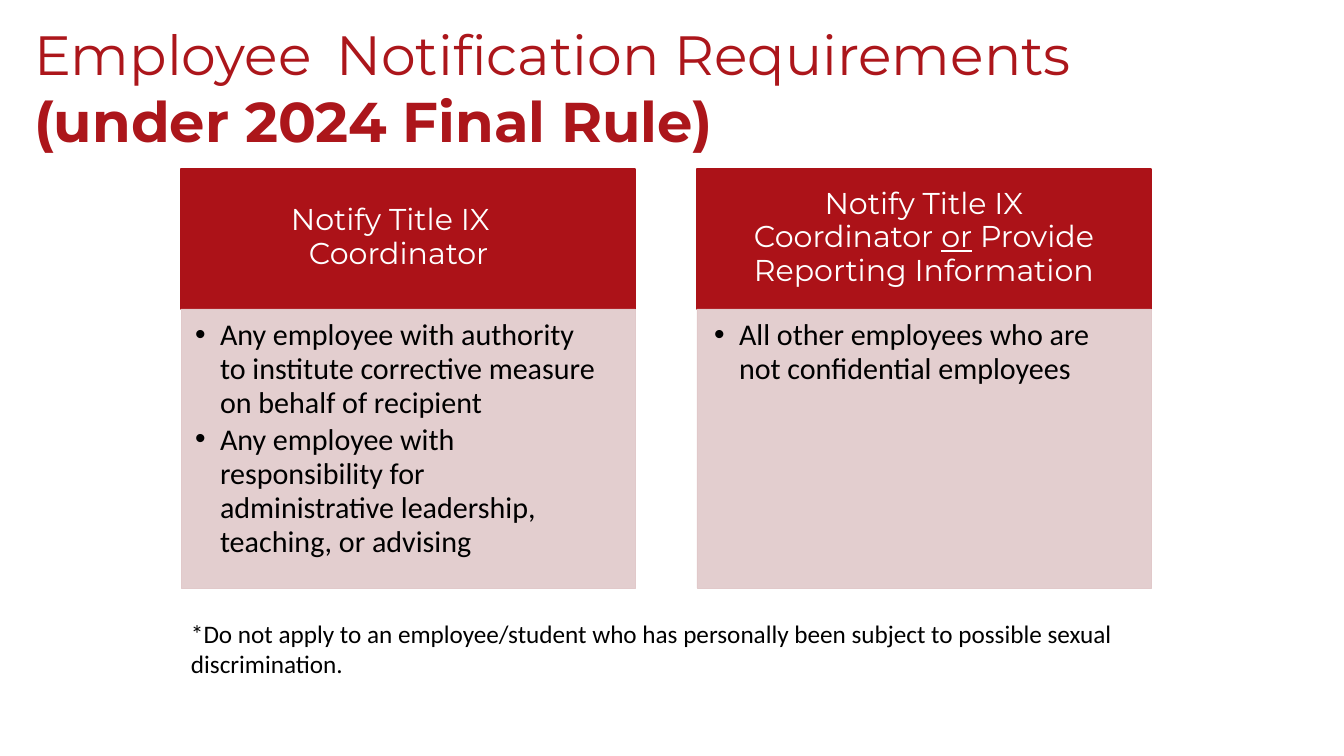
from pptx import Presentation
from pptx.dml.color import RGBColor as Rgb
from pptx.enum.text import MSO_ANCHOR as Anchor, MSO_AUTO_SIZE as Fit, PP_ALIGN as Align
from pptx.oxml.ns import qn
from pptx.util import Pt
from lxml.etree import SubElement as Sub

COLORS = {"title": "AC161B", "head": "AC1218", "body": "E1C9CA",
          "white": "FFFFFF", "black": "000000"}
WIDE, HIGH = 1344, 756
SCALE = 12192000 / WIDE


def px(n):
    return round(n * SCALE)


def rgb(name):
    return Rgb.from_string(COLORS[name])


def place(shape, box):
    shape.left, shape.top, shape.width, shape.height = map(px, box)


def frame(shape, left=0, top=0, right=0, bottom=0, anchor=Anchor.TOP):
    text = shape.text_frame
    text.word_wrap = True
    text.auto_size = Fit.NONE
    text.vertical_anchor = anchor
    text.margin_left, text.margin_top = px(left), px(top)
    text.margin_right, text.margin_bottom = px(right), px(bottom)
    return text


def style(para, face, size, color, space, align=Align.LEFT):
    para.alignment = align
    para.line_spacing = space
    para.space_before = Pt(0)
    font = para.font
    font.name, font.size, font.bold = face, Pt(size), False
    font.color.rgb = rgb(color)


def indent(para, left, first):
    props = para._p.get_or_add_pPr()
    props.set("marL", str(px(left)))
    props.set("indent", str(px(first)))
    return props


def paint(shape, color, width):
    shape.fill.solid()
    shape.fill.fore_color.rgb = rgb(color)
    shape.line.color.rgb = rgb(color)
    shape.line.width = Pt(width)


def add_title(shape, box):
    place(shape, box)
    para = frame(shape, top=2).paragraphs[0]
    tabs = Sub(indent(para, 0, 0), qn("a:tabLst"))
    Sub(tabs, qn("a:tab"), pos=str(px(319)), algn="l")
    style(para, "Montserrat", 39.5, "title", 1.0)
    para.add_run().text = "Employee\tNotification Requirements"
    para.add_line_break()
    rule = para.add_run()
    rule.text = "(under 2024 Final Rule)"
    rule.font.size, rule.font.bold = Pt(40), True


def add_head(shape, box, lines, align, left, first):
    place(shape, box)
    paint(shape, "head", 1)
    para = frame(shape, bottom=4, anchor=Anchor.MIDDLE).paragraphs[0]
    indent(para, left, first)
    style(para, "Montserrat", 21.5, "white", Pt(24), align)
    for row, parts in enumerate(lines):
        if row:
            para.add_line_break()
        for part in parts:
            run = para.add_run()
            run.text = part
            if part == "or":
                run.font.underline = True


def add_list(shape, box, items, inset):
    place(shape, box)
    paint(shape, "body", 0.25)
    tint = shape._element.spPr.find(qn("a:solidFill"))[0]
    Sub(tint, qn("a:alpha"), val="90000")
    text = frame(shape, left=inset, top=9, right=33)
    for row, item in enumerate(items):
        para = text.add_paragraph() if row else text.paragraphs[0]
        props = indent(para, 39, -25)
        Sub(props, qn("a:buFont"), typeface="Arial")
        Sub(props, qn("a:buChar"), char="•")
        style(para, "Calibri", 21.5, "black", Pt(24.2))
        if row:
            para.space_before = Pt(2)
        para.add_run().text = item


def add_card(head, body, box, card):
    left, top, width, height = box
    split = 140
    add_head(head, (left, top, width, split), *card["head"])
    add_list(body, (left, top + split, width, height - split), *card["list"])


def add_note(slide, box):
    shape = slide.shapes.add_textbox(*map(px, box))
    para = frame(shape, top=1).paragraphs[0]
    style(para, "Calibri", 18, "black", 1.0)
    para.add_run().text = ("*Do not apply to an employee/student who has personally "
                           "been subject to possible sexual discrimination.")


CARDS = [
    {"head": ([["Notify Title IX"], ["Coordinator"]], Align.LEFT, 128, -18),
     "list": (["Any employee with authority to institute corrective measure "
               "on behalf of recipient",
               "Any employee with responsibility for administrative leadership, "
               "teaching, or advising"], 0)},
    {"head": ([["Notify Title IX"], ["Coordinator ", "or", " Provide"],
               ["Reporting Information"]], Align.CENTER, 0, 0),
     "list": (["All other employees who are not confidential employees"], 3)},
]


def main():
    deck = Presentation()
    deck.slide_width, deck.slide_height = px(WIDE), px(HIGH)
    slide = deck.slides.add_slide(deck.slide_layouts[4])
    spots = slide.placeholders
    add_title(spots[0], (34, 18, 1125, 142))
    for col, card in enumerate(CARDS):
        add_card(spots[1 + 2 * col], spots[2 + 2 * col],
                 (181 + 516 * col, 169, 454, 419), card)
    add_note(slide, (191, 617, 928, 64))
    deck.save("out.pptx")


if __name__ == "__main__":
    main()
